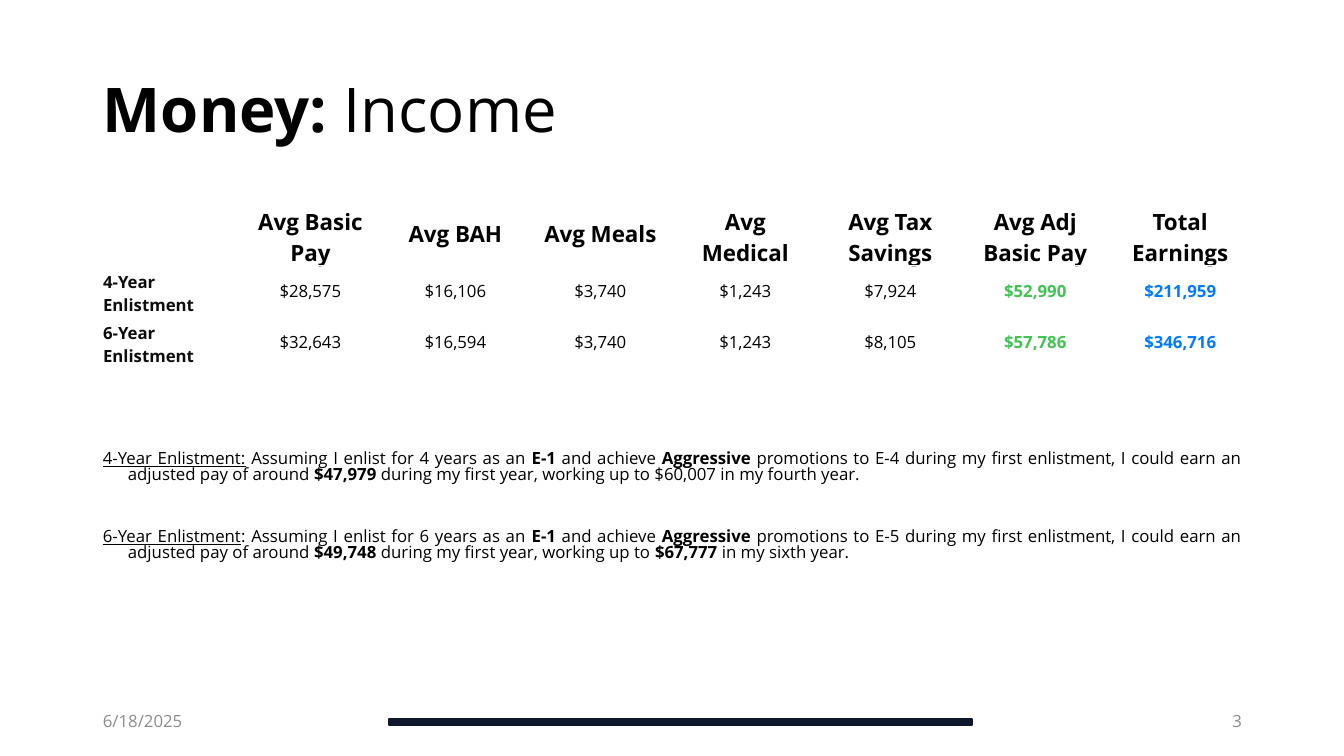
from lxml import etree
from pptx import Presentation
from pptx.dml.color import RGBColor
from pptx.enum.shapes import MSO_SHAPE
from pptx.enum.text import MSO_ANCHOR, PP_ALIGN
from pptx.oxml.ns import qn
from pptx.util import Emu, Pt

RECT = MSO_SHAPE.RECTANGLE
TOP, MIDDLE = MSO_ANCHOR.TOP, MSO_ANCHOR.MIDDLE
LEFT, CENTER, RIGHT, JUSTIFY = PP_ALIGN.LEFT, PP_ALIGN.CENTER, PP_ALIGN.RIGHT, PP_ALIGN.JUSTIFY

EMU_PER_PX = 914400 / 100.8
FONT = "Open Sans"
COLORS = {
    "white": "FFFFFF",
    "black": "000000",
    "label": "0D0D0D",
    "navy": "0E182D",
    "green": "40C353",
    "blue": "007BFF",
    "grey": "8C8C8C",
}


def px(n):
    return Emu(round(n * EMU_PER_PX))


def rgb(name):
    return RGBColor.from_string(COLORS[name])


class SlideBuilder:
    def __init__(self, slide):
        self.slide = slide

    def run(self, paragraph, text, size, color="black", bold=False, underline=False):
        run = paragraph.add_run()
        run.text = text
        font = run.font
        font.name, font.size = FONT, Pt(size)
        font.bold, font.underline = bold, underline
        font.color.rgb = rgb(color)

    def text(self, box, paragraphs, size, color="black", align=LEFT, anchor=MIDDLE,
             spacing=1.0, gap=0, hanging=0):
        """Each paragraph is a list of (text, style) runs; style holds 'b' and 'u' flags."""
        frame = self.slide.shapes.add_textbox(*map(px, box)).text_frame
        frame.word_wrap = True
        frame.vertical_anchor = anchor
        for i, runs in enumerate(paragraphs):
            paragraph = frame.add_paragraph() if i else frame.paragraphs[0]
            paragraph.alignment = align
            paragraph.line_spacing = spacing
            if i:
                paragraph.space_before = Pt(gap)
            if hanging:
                props = paragraph._p.get_or_add_pPr()
                props.set("marL", str(px(hanging)))
                props.set("indent", str(-px(hanging)))
            for words, style in runs:
                self.run(paragraph, words, size, color, "b" in style, "u" in style)

    def bar(self, box, color):
        bar = self.slide.shapes.add_shape(RECT, *map(px, box))
        bar.shadow.inherit = False
        bar.fill.solid()
        bar.fill.fore_color.rgb = rgb(color)
        bar.line.color.rgb = rgb(color)
        bar.line.width = Pt(1)

    def borders(self, cell, color):
        props = cell._tc.get_or_add_tcPr()
        for i, side in enumerate(("lnL", "lnR", "lnT", "lnB")):
            line = etree.Element(qn("a:" + side), w=str(Pt(1)))
            fill = etree.SubElement(line, qn("a:solidFill"))
            etree.SubElement(fill, qn("a:srgbClr"), val=COLORS[color])
            props.insert(i, line)

    def table(self, left, top, column_width, row_height, rows, style_of):
        count = len(rows[0])
        table = self.slide.shapes.add_table(
            len(rows), count, px(left), px(top),
            px(column_width * count), px(row_height * len(rows))).table
        table.first_row = table.horz_banding = False
        for column in table.columns:
            column.width = px(column_width)
        for r, values in enumerate(rows):
            table.rows[r].height = px(row_height)
            for c, value in enumerate(values):
                cell = table.cell(r, c)
                cell.fill.background()
                self.borders(cell, "white")
                cell.vertical_anchor = MIDDLE
                paragraph = cell.text_frame.paragraphs[0]
                paragraph.alignment = CENTER if c else LEFT
                if value:
                    self.run(paragraph, value, **style_of(r, c))


def income_style(row, column):
    if row == 0:
        return {"size": 16, "bold": True}
    accents = {0: "label", 6: "green", 7: "blue"}
    return {"size": 12, "bold": column in accents, "color": accents.get(column, "black")}


INCOME = [
    ["", "Avg Basic Pay", "Avg BAH", "Avg Meals", "Avg Medical",
     "Avg Tax Savings", "Avg Adj Basic Pay", "Total Earnings"],
    ["4-Year Enlistment", "$28,575", "$16,106", "$3,740", "$1,243",
     "$7,924", "$52,990", "$211,959"],
    ["6-Year Enlistment", "$32,643", "$16,594", "$3,740", "$1,243",
     "$8,105", "$57,786", "$346,716"],
]


def assumption(heading, opening, grade, first_pay, ending):
    return [
        (heading, "u"), (opening, ""), ("E-1", "b"), (" and achieve ", ""), ("Aggressive", "b"),
        (f" promotions to {grade} during my first enlistment, "
         "I could earn an adjusted pay of around ", ""),
        (first_pay, "b"), *ending,
    ]


ASSUMPTIONS = [
    assumption("4-Year Enlistment:", " Assuming I enlist for 4 years as an ", "E-4", "$47,979",
               [(" during my first year, working up to $60,007 in my fourth year.", "")]),
    assumption("6-Year Enlistment", ": Assuming I enlist for 6 years as an ", "E-5", "$49,748",
               [(" during my first year, working up to ", ""), ("$67,777", "b"),
                (" in my sixth year.", "")]),
]


def main():
    deck = Presentation()
    deck.slide_width, deck.slide_height = px(1344), px(756)
    page = SlideBuilder(deck.slides.add_slide(deck.slide_layouts[6]))

    # Footer bar
    page.bar((389, 719, 583, 6), "navy")

    # Title
    page.text((93, 40, 1159, 146), [[("Money:", "b"), (" Income", "")]], 44, spacing=0.9)

    # Income table
    page.table(93, 202, 145, 41, INCOME, income_style)

    # Assumptions behind each enlistment
    page.text((93, 447, 1159, 206), ASSUMPTIONS, 12, align=JUSTIFY, anchor=TOP,
              spacing=0.79, gap=33, hanging=25)

    # Date and page number
    page.text((93, 701, 302, 40), [[("6/18/2025", "")]], 12, "grey")
    page.text((950, 701, 302, 40), [[("3", "")]], 12, "grey", RIGHT)

    deck.save("out.pptx")


if __name__ == "__main__":
    main()
